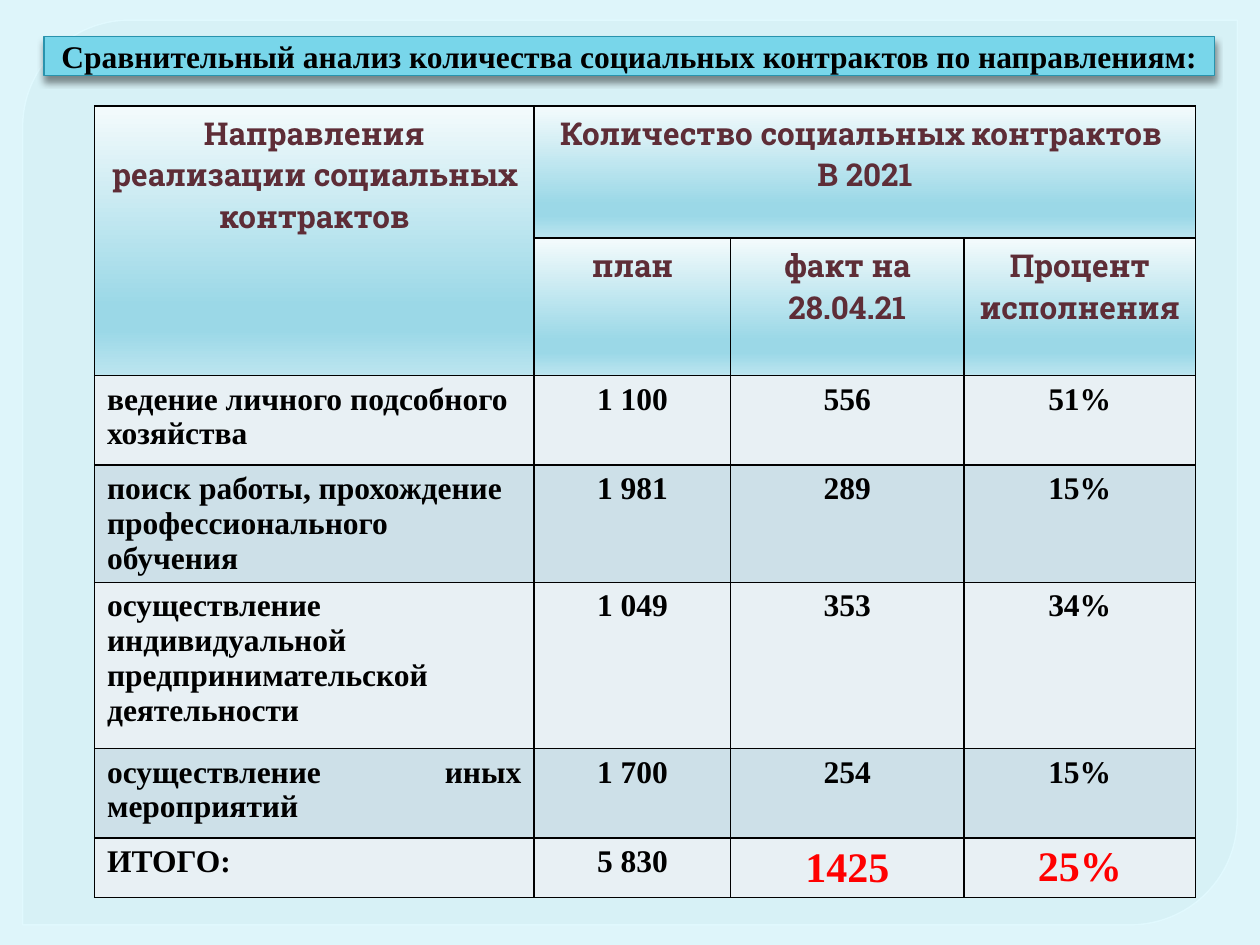
"""Build the slide comparing social contracts by direction."""
from dataclasses import dataclass

import pptx
import pptx.dml.color
import pptx.enum.shapes
import pptx.enum.text
import pptx.oxml
import pptx.oxml.ns
import pptx.shapes.autoshape
import pptx.table
import pptx.util
from lxml import etree

Inches = pptx.util.Inches
Pt = pptx.util.Pt
ALIGN = pptx.enum.text.PP_ALIGN
ANCHOR = pptx.enum.text.MSO_ANCHOR
qn = pptx.oxml.ns.qn

COLORS = {
    "background": "DEF5FA", "panel": "D4EFF5", "panel_line": "E2FAFF",
    "banner": "78D6EA", "banner_line": "2993AD", "text": "000000",
    "heading": "5E2D37", "total": "FF0000", "odd": "E8F0F4", "even": "CDE0E8",
}
HEADING_STOPS = ((0, "F4FBFC"), (74, "9BD8E7"), (83, "9BD8E7"), (100, "BCE5EF"))
COLUMN_WIDTHS = (3.49, 1.56, 1.85, 1.84)
ROW_HEIGHTS = (1.05, 1.09, 0.71, 0.93, 1.32, 0.71, 0.47)


@dataclass(frozen=True)
class TextStyle:
    font: str
    color: str
    size: int = 18


@dataclass(frozen=True)
class Direction:
    name: str
    plan: str
    fact: str
    percent: str
    name_align: ALIGN = ALIGN.LEFT


@dataclass(frozen=True)
class Heading:
    row: int
    column: int
    text: str


HEADING = TextStyle("Roboto Slab", "heading")
BODY = TextStyle("Times New Roman", "text")
TOTAL = TextStyle("Times New Roman", "total", 24)

HEADINGS = (
    Heading(0, 0, "Направления реализации социальных контрактов"),
    Heading(0, 1, "Количество социальных контрактов \nВ 2021"),
    Heading(1, 1, "план"),
    Heading(1, 2, "факт на 28.04.21"),
    Heading(1, 3, "Процент исполнения"),
)
DIRECTIONS = (
    Direction("ведение личного подсобного хозяйства", "1 100", "556", "51%"),
    Direction("поиск работы, прохождение профессионального обучения", "1 981", "289", "15%"),
    Direction("осуществление индивидуальной предпринимательской деятельности",
              "1 049", "353", "34%"),
    Direction("осуществление иных мероприятий", "1 700", "254", "15%", ALIGN.JUSTIFY),
    Direction("ИТОГО:", "5 830", "1425", "25%"),
)


def rgb(name: str) -> pptx.dml.color.RGBColor:
    return pptx.dml.color.RGBColor.from_string(COLORS[name])


def write(frame, text: str, style: TextStyle, align: ALIGN) -> None:
    frame.text = text
    for paragraph in frame.paragraphs:
        paragraph.alignment = align
        for run in paragraph.runs:
            run.font.name = style.font
            run.font.size = Pt(style.size)
            run.font.bold = True
            run.font.color.rgb = rgb(style.color)


def paint(shape, fill: str, line: str, width: float) -> None:
    shape.fill.solid()
    shape.fill.fore_color.rgb = rgb(fill)
    shape.line.color.rgb = rgb(line)
    shape.line.width = Pt(width)


def set_alpha(fill_owner, percent: int) -> None:
    color = fill_owner.find(qn("a:solidFill"))[0]
    etree.SubElement(color, qn("a:alpha"), val=str(percent * 1000))


def add_panel(slide) -> None:
    panel = slide.shapes.add_shape(
        pptx.enum.shapes.MSO_SHAPE.ROUND_2_DIAG_RECTANGLE,
        Inches(0.18), Inches(0.16), Inches(9.64), Inches(7.18))
    panel.adjustments[0] = 0.118
    panel.shadow.inherit = False
    paint(panel, "panel", "panel_line", 0.87)
    properties = panel._element.spPr
    set_alpha(properties, 65)
    set_alpha(properties.find(qn("a:ln")), 88)
    slide.shapes._spTree.insert(2, panel._element)


def format_banner(title) -> None:
    title.left, title.top = Inches(0.35), Inches(0.29)
    title.width, title.height = Inches(9.29), Inches(0.31)
    paint(title, "banner", "banner_line", 0.75)
    frame = title.text_frame
    frame.auto_size = pptx.enum.text.MSO_AUTO_SIZE.NONE
    frame.word_wrap = True
    frame.vertical_anchor = ANCHOR.MIDDLE
    write(frame, "Сравнительный анализ количества социальных контрактов по направлениям:",
          BODY, ALIGN.CENTER)
    effects = etree.SubElement(title._element.spPr, qn("a:effectLst"))
    shadow = etree.SubElement(effects, qn("a:outerShdw"), blurRad=str(Pt(4)),
                              dist=str(Pt(3)), dir="5400000", rotWithShape="0")
    shade = etree.SubElement(shadow, qn("a:srgbClr"), val=COLORS["text"])
    etree.SubElement(shade, qn("a:alpha"), val="43000")


def add_borders(cell: pptx.table._Cell) -> None:
    properties = cell._tc.get_or_add_tcPr()
    for index, side in enumerate(("a:lnL", "a:lnR", "a:lnT", "a:lnB")):
        border = etree.Element(qn(side), w=str(Pt(1)))
        solid = etree.SubElement(border, qn("a:solidFill"))
        etree.SubElement(solid, qn("a:srgbClr"), val=COLORS["text"])
        properties.insert(index, border)


def fill_heading(cell: pptx.table._Cell) -> None:
    gradient = etree.SubElement(cell._tc.get_or_add_tcPr(), qn("a:gradFill"), rotWithShape="1")
    stops = etree.SubElement(gradient, qn("a:gsLst"))
    for position, color in HEADING_STOPS:
        stop = etree.SubElement(stops, qn("a:gs"), pos=str(position * 1000))
        etree.SubElement(stop, qn("a:srgbClr"), val=color)
    etree.SubElement(gradient, qn("a:lin"), ang="5400000", scaled="0")


def fill_direction(table: pptx.table.Table, row: int, direction: Direction) -> None:
    is_total = direction is DIRECTIONS[-1]
    values = (direction.name, direction.plan, direction.fact, direction.percent)
    for column, value in enumerate(values):
        cell = table.cell(row, column)
        style = TOTAL if is_total and column >= 2 else BODY
        write(cell.text_frame, value, style, ALIGN.CENTER if column else direction.name_align)
        cell.fill.solid()
        cell.fill.fore_color.rgb = rgb("even" if row % 2 else "odd")


def add_contract_table(slide) -> None:
    table = slide.shapes.add_table(
        len(ROW_HEIGHTS), len(COLUMN_WIDTHS), Inches(0.75), Inches(0.84),
        Inches(sum(COLUMN_WIDTHS)), Inches(sum(ROW_HEIGHTS))).table
    for column, width in zip(table.columns, COLUMN_WIDTHS):
        column.width = Inches(width)
    for row, height in zip(table.rows, ROW_HEIGHTS):
        row.height = Inches(height)
    table.cell(0, 0).merge(table.cell(1, 0))
    table.cell(0, 1).merge(table.cell(0, 3))
    for heading in HEADINGS:
        cell = table.cell(heading.row, heading.column)
        write(cell.text_frame, heading.text, HEADING, ALIGN.CENTER)
        fill_heading(cell)
    for row, direction in enumerate(DIRECTIONS, start=2):
        fill_direction(table, row, direction)
    total_fact = table.cell(len(ROW_HEIGHTS) - 1, 2)
    total_fact.vertical_anchor = ANCHOR.MIDDLE
    total_fact.margin_left = total_fact.margin_right = total_fact.margin_top = Inches(0.01)
    total_fact.margin_bottom = 0
    for cell in table.iter_cells():
        add_borders(cell)


def main() -> None:
    presentation = pptx.Presentation()
    presentation.slide_width, presentation.slide_height = Inches(10), Inches(7.5)
    slide = presentation.slides.add_slide(presentation.slide_layouts[5])
    slide.background.fill.solid()
    slide.background.fill.fore_color.rgb = rgb("background")
    add_panel(slide)
    format_banner(slide.shapes.title)
    add_contract_table(slide)
    presentation.save("out.pptx")


if __name__ == "__main__":
    main()
